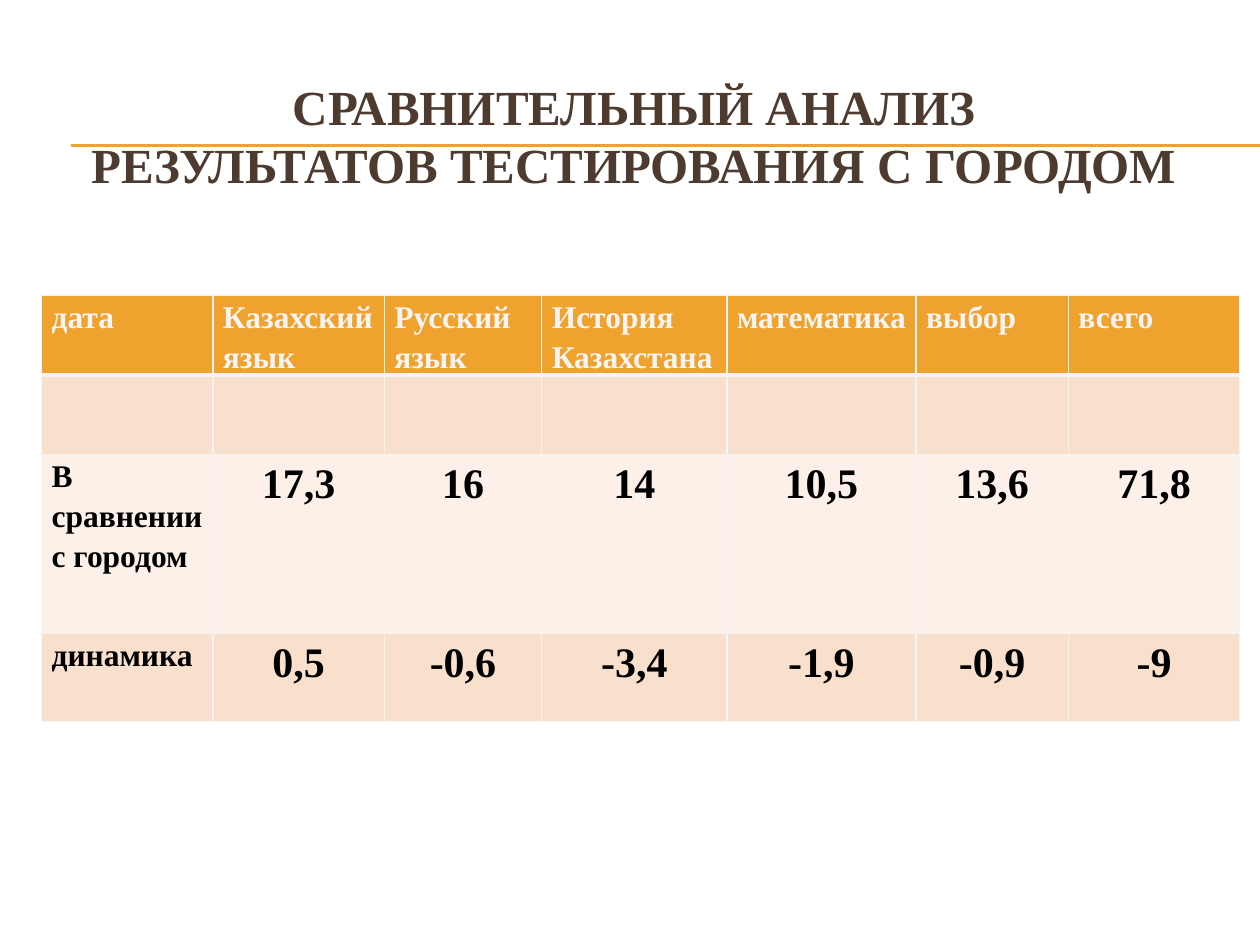
from lxml import etree
from pptx import Presentation
from pptx.dml.color import RGBColor
from pptx.enum.shapes import MSO_CONNECTOR
from pptx.enum.text import MSO_ANCHOR, PP_ALIGN
from pptx.oxml.ns import qn
from pptx.util import Inches, Pt

STRAIGHT = MSO_CONNECTOR.STRAIGHT
LEFT, CENTER = PP_ALIGN.LEFT, PP_ALIGN.CENTER
MIDDLE = MSO_ANCHOR.MIDDLE
FONT = "Times New Roman"
ORANGE, BROWN, LIGHT, BLACK = "F0A22E", "4E3B30", "F4F4F4", "000000"
PEACH, CREAM = "F9E0CD", "FCF0E8"


def format_text(paragraph, size, color, align):
    paragraph.alignment = align
    for run in paragraph.runs:
        run.font.name = FONT
        run.font.size = Pt(size)
        run.font.bold = True
        run.font.color.rgb = RGBColor.from_string(color)


def set_borders(cell, bottom_width):
    properties = cell._tc.get_or_add_tcPr()
    widths = {"a:lnL": 1, "a:lnR": 1, "a:lnT": 1, "a:lnB": bottom_width}
    for position, (side, width) in enumerate(widths.items()):
        border = etree.Element(qn(side), w=str(Pt(width)))
        fill = etree.SubElement(border, qn("a:solidFill"))
        etree.SubElement(fill, qn("a:srgbClr"), val=LIGHT)
        properties.insert(position, border)


prs = Presentation()
prs.slide_width, prs.slide_height = Inches(10), Inches(7.5)
slide = prs.slides.add_slide(prs.slide_layouts[5])
margin, content_width = Inches(0.33), Inches(9.5)

# Double rule behind the title
for y in (1.15, 1.16):
    rule = slide.shapes.add_connector(
        STRAIGHT, Inches(0.56), Inches(y), prs.slide_width, Inches(y))
    rule.line.color.rgb = RGBColor.from_string(ORANGE)
    rule.line.width = Pt(0.75)
    etree.SubElement(rule._element.spPr, qn("a:effectLst"))

# Title, moved in front of the rule
title = slide.shapes.title
title.left, title.top = margin, Inches(0.5)
title.width, title.height = content_width, Inches(1.14)
heading = title.text_frame
heading.text = "СРАВНИТЕЛЬНЫЙ АНАЛИЗ \vРЕЗУЛЬТАТОВ ТЕСТИРОВАНИЯ С ГОРОДОМ "
heading.word_wrap = True
heading.vertical_anchor = MIDDLE
format_text(heading.paragraphs[0], 28, BROWN, CENTER)
slide.shapes._spTree.append(title._element)

# Results table
results = [
    ["дата", "Казахский язык", "Русский язык", "История Казахстана",
     "математика", "выбор", "всего"],
    [""] * 7,
    ["В сравнении с городом", "17,3", "16", "14", "10,5", "13,6", "71,8"],
    ["динамика", "0,5", "-0,6", "-3,4", "-1,9", "-0,9", "-9"],
]
column_widths = [1.36, 1.36, 1.25, 1.47, 1.5, 1.21, 1.36]
row_heights = [0.63, 0.63, 1.42, 0.7]
row_fills = [ORANGE, PEACH, CREAM, PEACH]

table = slide.shapes.add_table(
    len(results), len(column_widths), margin, Inches(2.34),
    content_width, Inches(sum(row_heights))).table
for column, width in zip(table.columns, column_widths):
    column.width = Inches(width)
for row, height in zip(table.rows, row_heights):
    row.height = Inches(height)

for r, subjects in enumerate(results):
    for c, value in enumerate(subjects):
        cell = table.cell(r, c)
        cell.fill.solid()
        cell.fill.fore_color.rgb = RGBColor.from_string(row_fills[r])
        set_borders(cell, 3 if r == 0 else 1)
        cell.margin_left = cell.margin_right = Inches(0.08)
        cell.margin_top = cell.margin_bottom = 0
        cell.text_frame.text = value
        paragraph = cell.text_frame.paragraphs[0]
        paragraph.line_spacing = 1.15
        is_score = r > 0 and c > 0
        format_text(paragraph, 24 if is_score else 18,
                    LIGHT if r == 0 else BLACK, CENTER if is_score else LEFT)

prs.save("out.pptx")
